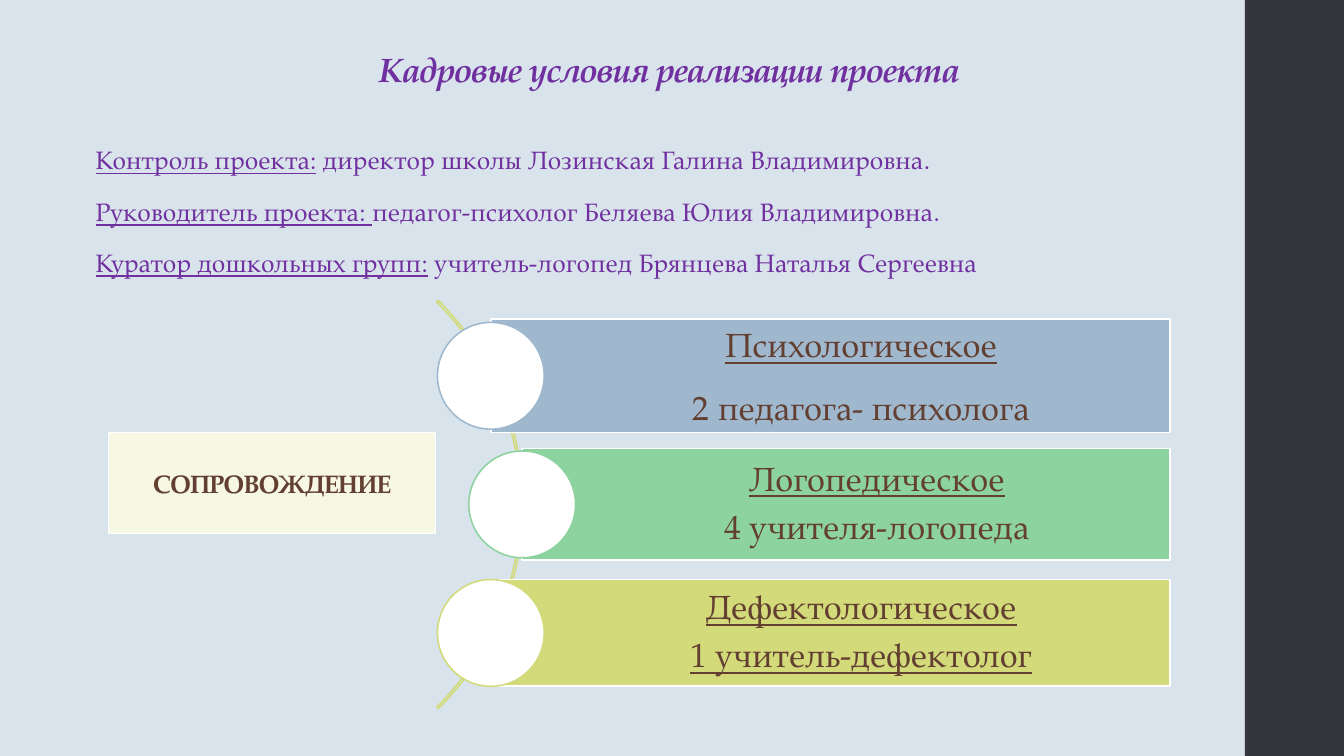
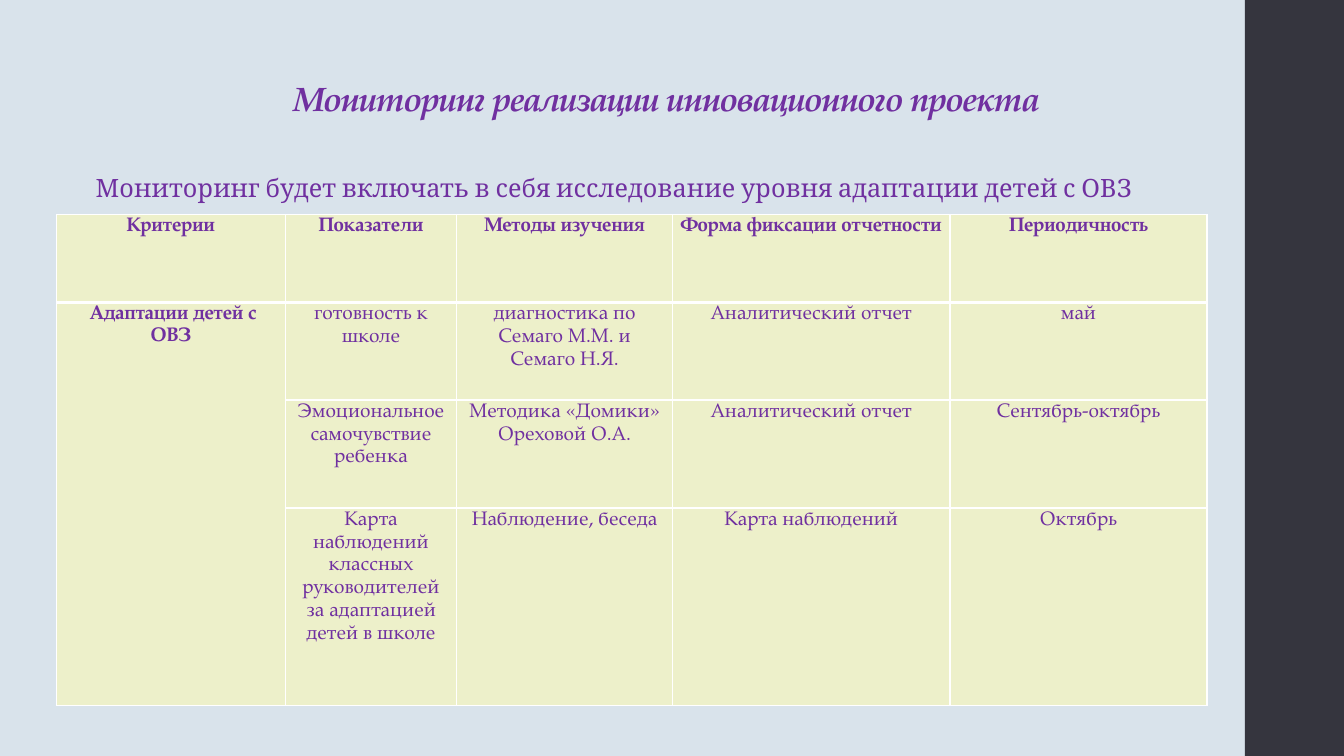
from dataclasses import dataclass, replace

from lxml.etree import SubElement
from pptx import Presentation
from pptx.dml.color import RGBColor
from pptx.enum.shapes import MSO_SHAPE
from pptx.enum.text import MSO_ANCHOR, PP_ALIGN
from pptx.oxml import parse_xml
from pptx.oxml.ns import nsdecls, qn
from pptx.util import Cm, Pt


@dataclass(frozen=True)
class TextStyle:
    size: float
    color: str
    font: str = "TeX Gyre Pagella"
    bold: bool = False
    italic: bool = False
    tracking: int = 0
    align: PP_ALIGN = PP_ALIGN.CENTER
    line: float = 1.0
    before: float = 0
    after: float = 0


class Theme:
    width, height, band_width = 33.87, 19.05, 2.5
    background, band = "D9E3EB", "35353E"
    purple, brown, white = "7030A0", "633F32", "FFFFFF"
    blue, green, olive = "9FB8CD", "8DD3A0", "D2DA7A"
    cream, cell_fill = "F6F8E4", "EDF0CA"
    thin, outline, grid, header_rule = 0.75, 1.1, 1, 3
    title = TextStyle(24, purple, bold=True, italic=True, tracking=-50, line=0.9)
    body = TextStyle(18, purple, tracking=10, align=PP_ALIGN.LEFT,
                     line=0.95, before=14, after=2)
    intro = replace(body, font="Cambria")
    bar = TextStyle(24, brown, line=0.9, after=8.4)
    loose_bar = replace(bar, line=1.0, after=16)
    label = TextStyle(18, brown, bold=True)
    cell = TextStyle(14, purple, line=1.15, after=6)
    strong_cell = replace(cell, bold=True)


class DeckBuilder:
    def __init__(self, theme):
        self.theme = theme
        self.deck = Presentation()
        self.deck.slide_width = Cm(theme.width)
        self.deck.slide_height = Cm(theme.height)
        self.page = None

    def new_page(self):
        theme = self.theme
        self.page = self.deck.slides.add_slide(self.deck.slide_layouts[6])
        fill = self.page.background.fill
        fill.solid()
        fill.fore_color.rgb = RGBColor.from_string(theme.background)
        self.shape(MSO_SHAPE.RECTANGLE, theme.width - theme.band_width, 0,
                   theme.band_width, theme.height, fill=theme.band)

    def set_lines(self, frame, lines, style):
        frame.word_wrap = True
        for index, (underlined, plain) in enumerate(lines):
            para = frame.add_paragraph() if index else frame.paragraphs[0]
            para.text = underlined or plain
            if underlined:
                para.runs[0].font.underline = True
                if plain:
                    para.add_run().text = plain
            para.alignment = style.align
            para.line_spacing = style.line
            para.space_before = Pt(style.before)
            para.space_after = Pt(style.after)
            for span in para.runs:
                span.font.name = style.font
                span.font.size = Pt(style.size)
                span.font.bold = style.bold
                span.font.italic = style.italic
                span.font.color.rgb = RGBColor.from_string(style.color)
                if style.tracking:
                    span.font._element.set("spc", str(style.tracking))

    def shape(self, kind, left, top, width, height, fill=None, line=None, weight=1.1):
        shape = self.page.shapes.add_shape(kind, Cm(left), Cm(top), Cm(width), Cm(height))
        shape.shadow.inherit = False
        if fill:
            shape.fill.solid()
            shape.fill.fore_color.rgb = RGBColor.from_string(fill)
        else:
            shape.fill.background()
        if line:
            shape.line.color.rgb = RGBColor.from_string(line)
            shape.line.width = Pt(weight)
        else:
            shape.line.fill.background()
        return shape

    def text(self, left, top, width, height, lines, style, anchor=MSO_ANCHOR.TOP):
        box = self.page.shapes.add_textbox(Cm(left), Cm(top), Cm(width), Cm(height))
        box.text_frame.vertical_anchor = anchor
        self.set_lines(box.text_frame, lines, style)

    def title(self, left, top, width, height, words):
        self.text(left, top, width, height, [("", words)], self.theme.title,
                  MSO_ANCHOR.BOTTOM)

    def label(self, left, top, width, height, words):
        box = self.shape(MSO_SHAPE.RECTANGLE, left, top, width, height,
                         self.theme.cream, self.theme.white, self.theme.thin)
        box.text_frame.vertical_anchor = MSO_ANCHOR.MIDDLE
        self.set_lines(box.text_frame, [("", words)], self.theme.label)

    def arc(self, left, top, size, color):
        arc = self.shape(MSO_SHAPE.BLOCK_ARC, left, top, size, size,
                         line=color, weight=self.theme.outline)
        for index, value in enumerate((189, 27, 0.004)):
            arc.adjustments[index] = value

    def bar(self, left, right, middle, height, color, lines, style, diameter=2.69):
        theme = self.theme
        bar = self.shape(MSO_SHAPE.RECTANGLE, left, middle - height / 2,
                         right - left, height, color, theme.white, theme.outline)
        frame = bar.text_frame
        frame.vertical_anchor = MSO_ANCHOR.MIDDLE
        frame.margin_left = Cm(1.73)
        frame.margin_right = frame.margin_top = frame.margin_bottom = Cm(0.18)
        self.set_lines(frame, lines, style)
        self.shape(MSO_SHAPE.OVAL, left - diameter / 2, middle - diameter / 2,
                   diameter, diameter, theme.white, color, theme.outline)

    def borders(self, cell, top, bottom):
        properties = cell._tc.get_or_add_tcPr()
        weights = {"lnL": self.theme.grid, "lnR": self.theme.grid,
                   "lnT": top, "lnB": bottom}
        for index, (side, weight) in enumerate(weights.items()):
            edge = parse_xml(f'<a:{side} {nsdecls("a")} w="{Pt(weight)}"/>')
            fill = SubElement(edge, qn("a:solidFill"))
            SubElement(fill, qn("a:srgbClr")).set("val", self.theme.white)
            properties.insert(index, edge)

    def table(self, left, top, widths, heights, rows):
        theme = self.theme
        table = self.page.shapes.add_table(
            len(heights), len(widths), Cm(left), Cm(top),
            Cm(sum(widths)), Cm(sum(heights))).table
        table.horz_banding = False
        for column, width in zip(table.columns, widths):
            column.width = Cm(width)
        for row, height in zip(table.rows, heights):
            row.height = Cm(height)
        for row_index, words in enumerate(rows):
            for column_index, content in enumerate(words):
                cell = table.cell(row_index, column_index)
                cell.margin_left = cell.margin_right = Cm(0.2)
                cell.margin_top = cell.margin_bottom = 0
                cell.fill.solid()
                cell.fill.fore_color.rgb = RGBColor.from_string(theme.cell_fill)
                self.borders(cell,
                             theme.header_rule if row_index == 1 else theme.grid,
                             theme.header_rule if row_index == 0 else theme.grid)
                strong = row_index == 0 or column_index == 0
                if content:
                    self.set_lines(cell.text_frame, [("", content)],
                                   theme.strong_cell if strong else theme.cell)
        table.cell(1, 0).merge(table.cell(len(heights) - 1, 0))


def staff_page(builder):
    theme = builder.theme
    builder.new_page()
    builder.title(3.4, 1.02, 26.92, 1.37, "Кадровые условия реализации проекта")
    builder.text(2.16, 3.58, 24.79, 4.14, [
        ("Контроль проекта:", " директор школы Лозинская Галина Владимировна."),
        ("Руководитель проекта: ", "педагог-психолог Беляева Юлия Владимировна."),
        ("Куратор дошкольных групп:", " учитель-логопед Брянцева Наталья Сергеевна"),
    ], theme.body)
    builder.arc(-1.37, 5.44, 14.55, theme.olive)
    bars = [
        (12.37, 2.87, theme.blue, theme.loose_bar,
         [("Психологическое", ""), ("", "2 педагога- психолога")]),
        (13.16, 2.82, theme.green, theme.bar,
         [("Логопедическое", ""), ("", "4 учителя-логопеда")]),
        (12.37, 2.69, theme.olive, theme.bar,
         [("Дефектологическое", ""), ("1 учитель-дефектолог", "")]),
    ]
    for index, (left, height, color, style, lines) in enumerate(bars):
        builder.bar(left, 29.49, 9.47 + 3.24 * index, height, color, lines, style)
    builder.label(2.74, 10.9, 8.23, 2.54, "СОПРОВОЖДЕНИЕ")


def monitoring_page(builder):
    builder.new_page()
    builder.title(1.19, 0.74, 31.19, 2.39,
                  "Мониторинг реализации инновационного проекта")
    builder.text(2.16, 4.27, 28.22, 1.2, [
        ("", "Мониторинг будет включать в себя исследование уровня адаптации детей с ОВЗ"),
    ], builder.theme.intro)
    builder.table(1.42, 5.41, (5.77, 4.32, 5.44, 6.99, 6.48), (2.21, 2.46, 2.72, 4.98), [
        ("Критерии", "Показатели", "Методы изучения",
         "Форма фиксации отчетности", "Периодичность"),
        (" Адаптации детей с ОВЗ", "готовность к школе",
         "диагностика по Семаго М.М. и Семаго Н.Я.", "Аналитический отчет", "май"),
        ("", "Эмоциональное самочувствие ребенка",
         "Методика «Домики» Ореховой О.А.", "Аналитический отчет", "Сентябрь-октябрь"),
        ("", "Карта наблюдений классных руководителей за адаптацией детей в школе",
         "Наблюдение, беседа", "Карта наблюдений", "Октябрь"),
    ])


def main():
    builder = DeckBuilder(Theme())
    staff_page(builder)
    monitoring_page(builder)
    builder.deck.save("out.pptx")


if __name__ == "__main__":
    main()
